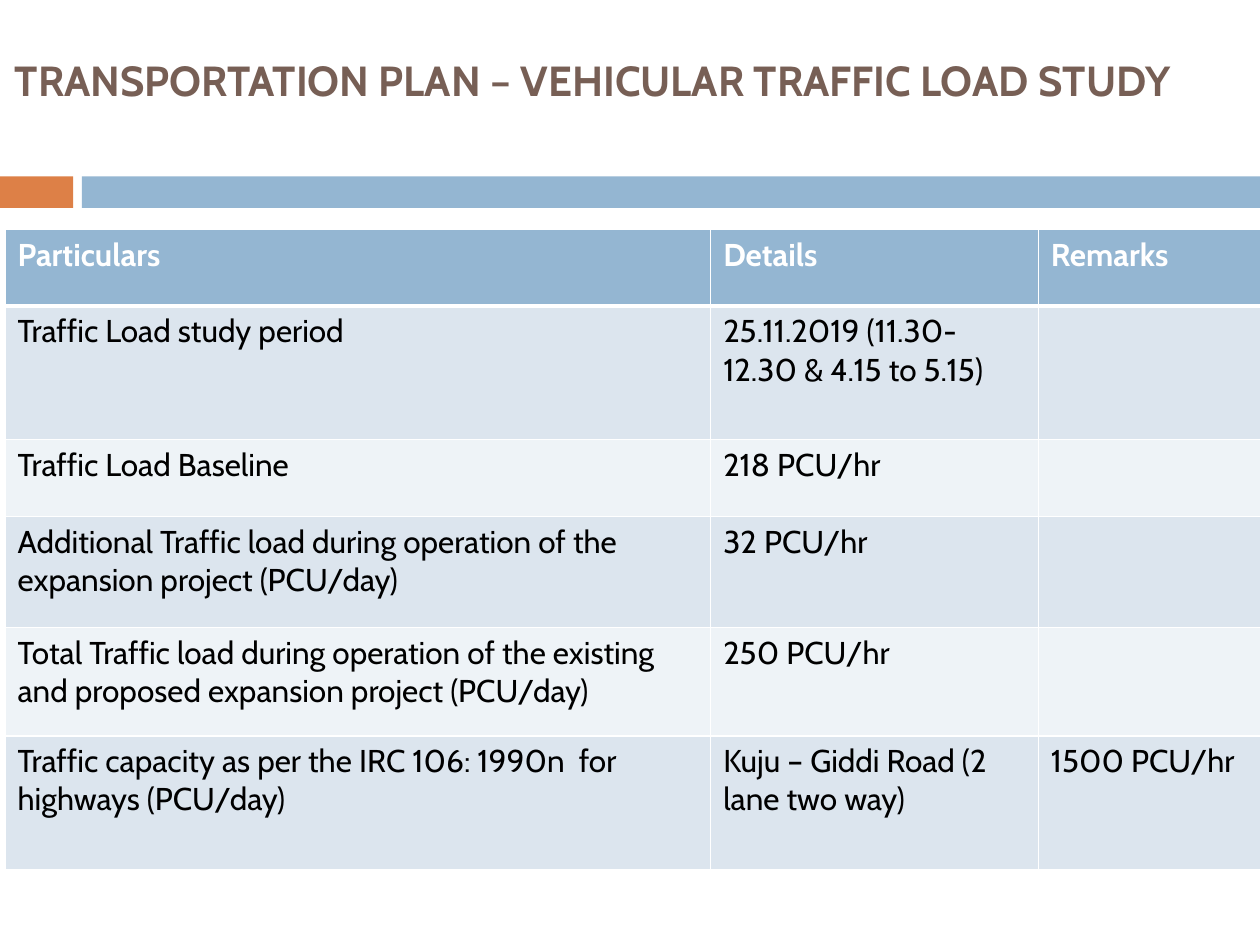
from pptx import Presentation
from pptx.dml.color import RGBColor
from pptx.enum.shapes import MSO_SHAPE
from pptx.enum.text import MSO_ANCHOR, PP_ALIGN
from pptx.oxml.ns import qn
from pptx.util import Inches, Pt
from lxml.etree import SubElement

TITLE = "TRANSPORTATION PLAN – VEHICULAR TRAFFIC LOAD STUDY"
COLUMN_WIDTHS = [5.6, 2.6, 1.77]
ROW_HEIGHTS = [0.61, 1.06, 0.61, 0.88, 0.86, 1.06]
TRAFFIC_ROWS = [
    ["Particulars", "Details", "Remarks"],
    ["Traffic Load study period", "25.11.2019 (11.30-12.30 & 4.15 to 5.15)", ""],
    ["Traffic Load Baseline", "218 PCU/hr", ""],
    ["Additional Traffic load during operation of the expansion project (PCU/day)",
     "32 PCU/hr", ""],
    ["Total Traffic load during operation of the existing and proposed expansion "
     "project (PCU/day)", "250 PCU/hr", ""],
    ["Traffic capacity as per the IRC 106: 1990n  for highways (PCU/day)",
     "Kuju – Giddi Road (2 lane two way)", "1500 PCU/hr"],
]


def color(value):
    return RGBColor.from_string(value)


class SlideWriter:
    font = "Cabin"
    blue = "94B6D2"
    orange = "DD8047"
    brown = "775F55"
    white = "FFFFFF"
    black = "000000"
    bands = ["EEF3F7", "DCE5EE"]

    def __init__(self, page):
        self.page = page

    def format_text(self, frame, size, ink, bold):
        for para in frame.paragraphs:
            for span in para.runs:
                span.font.name = self.font
                span.font.size = Pt(size)
                span.font.bold = bold
                span.font.color.rgb = color(ink)

    def bar(self, left, top, width, height, fill):
        bar = self.page.shapes.add_shape(
            MSO_SHAPE.RECTANGLE, Inches(left), Inches(top), Inches(width), Inches(height))
        bar.shadow.inherit = False
        bar.fill.solid()
        bar.fill.fore_color.rgb = color(fill)
        bar.line.fill.background()

    def title(self, text, left, top, width, height):
        box = self.page.shapes.add_textbox(
            Inches(left), Inches(top), Inches(width), Inches(height))
        frame = box.text_frame
        frame.word_wrap = True
        frame.vertical_anchor = MSO_ANCHOR.MIDDLE
        frame.text = text
        frame.paragraphs[0].alignment = PP_ALIGN.JUSTIFY
        self.format_text(frame, 24, self.brown, True)

    def border(self, cell, side, points):
        properties = cell._tc.get_or_add_tcPr()
        line = SubElement(properties, qn(f"a:ln{side}"), w=str(Pt(points)))
        fill = SubElement(line, qn("a:solidFill"))
        SubElement(fill, qn("a:srgbClr"), val=self.white)

    def cell(self, cell, text, row):
        header = row == 0
        widths = {"L": 1, "R": 1, "T": 3 if row == 1 else 1, "B": 3 if header else 1}
        for side, points in widths.items():
            self.border(cell, side, points)
        cell.fill.solid()
        cell.fill.fore_color.rgb = color(self.blue if header else self.bands[row % 2])
        cell.text_frame.text = text
        self.format_text(cell.text_frame, 18, self.white if header else self.black, header)

    def table(self, rows, left, top, widths, heights):
        table = self.page.shapes.add_table(
            len(rows), len(widths), Inches(left), Inches(top),
            Inches(sum(widths)), Inches(sum(heights))).table
        for column, width in zip(table.columns, widths):
            column.width = Inches(width)
        for table_row, height in zip(table.rows, heights):
            table_row.height = Inches(height)
        for row, texts in enumerate(rows):
            for column, text in enumerate(texts):
                self.cell(table.cell(row, column), text, row)


def main():
    deck = Presentation()
    deck.slide_width = Inches(10)
    deck.slide_height = Inches(7.5)
    writer = SlideWriter(deck.slides.add_slide(deck.slide_layouts[6]))
    writer.bar(0, 1.4, 0.58, 0.25, writer.orange)
    writer.bar(0.65, 1.4, 9.35, 0.25, writer.blue)
    writer.title(TITLE, 0.02, 0.29, 10, 0.68)
    writer.table(TRAFFIC_ROWS, 0.04, 1.82, COLUMN_WIDTHS, ROW_HEIGHTS)
    deck.save("out.pptx")


if __name__ == "__main__":
    main()
